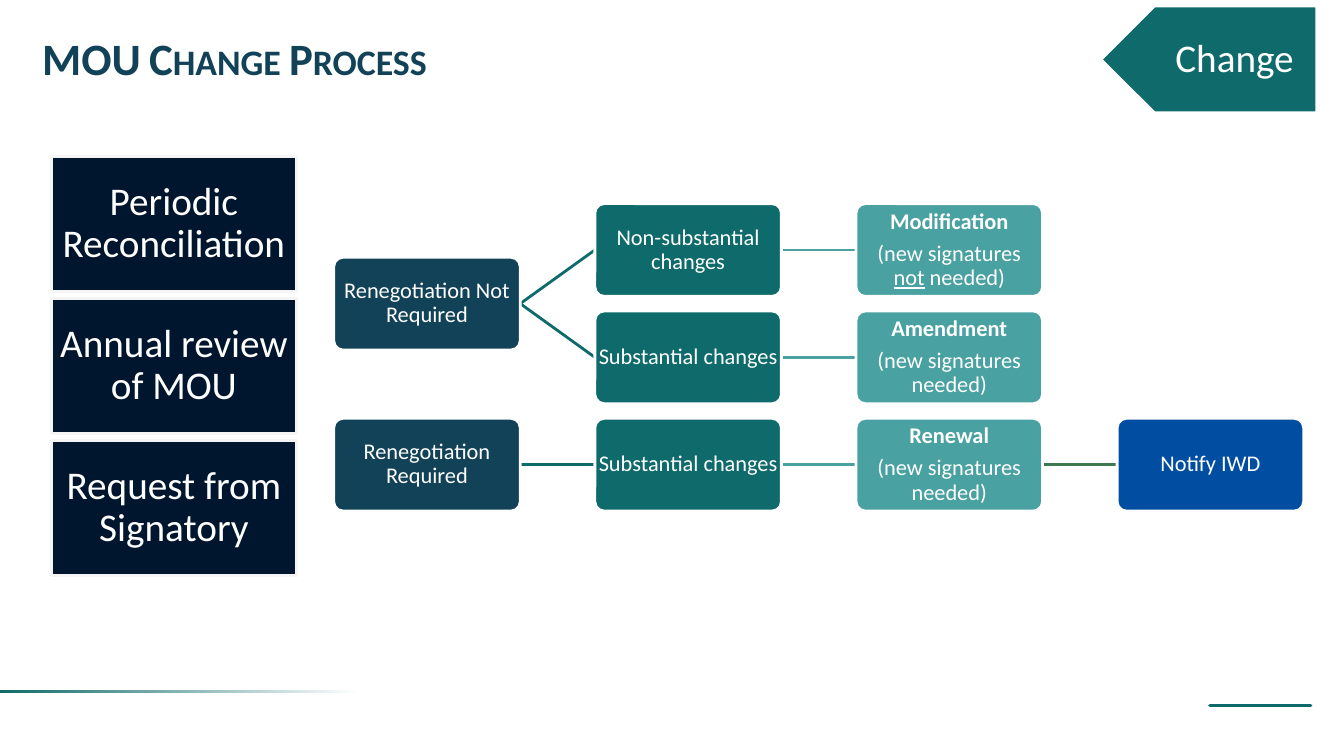
from lxml import etree
from pptx import Presentation
from pptx.dml.color import RGBColor
from pptx.enum.shapes import MSO_CONNECTOR as Connector, MSO_SHAPE as Shape
from pptx.enum.text import MSO_ANCHOR as Anchor, PP_ALIGN as Align
from pptx.oxml.ns import qn
from pptx.util import Inches, Pt

COLORS = {
    "white": "FFFFFF", "offwhite": "F5F5F5", "night": "00162E", "navy": "114257",
    "teal": "0F6A6B", "aqua": "49A1A2", "blue": "004DA2", "green": "3E7951",
}
COLORS = {name: RGBColor.from_string(value) for name, value in COLORS.items()}


def add_box(kind, left, top, width, height, fill, line="white"):
    shape = slide.shapes.add_shape(
        kind, Inches(left), Inches(top), Inches(width), Inches(height))
    shape.shadow.inherit = False
    shape.fill.solid()
    shape.fill.fore_color.rgb = COLORS[fill]
    shape.line.color.rgb = COLORS[line]
    shape.line.width = Pt(2)
    return shape


def write(shape, lines, size, insets, color="white", bold_first=False, align=Align.CENTER):
    """Fill a shape with paragraphs; words between underscores are underlined."""
    frame = shape.text_frame
    frame.word_wrap = True
    frame.vertical_anchor = Anchor.MIDDLE
    (frame.margin_left, frame.margin_top,
     frame.margin_right, frame.margin_bottom) = map(Inches, insets)
    for index, line in enumerate(lines):
        paragraph = frame.paragraphs[0] if index == 0 else frame.add_paragraph()
        paragraph.alignment = align
        paragraph.line_spacing = 0.9
        paragraph.space_after = Pt(round(size * 0.35, 1))
        for position, part in enumerate(line.split("_")):
            run = paragraph.add_run()
            run.text = part
            if position % 2:
                run.font.underline = True
        font = paragraph.font
        font.name, font.size = "Calibri", Pt(size)
        font.bold = bold_first and index == 0
        font.color.rgb = COLORS[color]
    return frame.paragraphs[0]


presentation = Presentation()
presentation.slide_width, presentation.slide_height = Inches(13.33), Inches(7.5)
slide = presentation.slides.add_slide(presentation.slide_layouts[6])

# Footer: state outline with the page number
state_outline = [
    (12.91, 7), (12.77, 7.01), (12.43, 7.02), (12.44, 7.07), (12.43, 7.11),
    (12.46, 7.18), (12.48, 7.22), (12.48, 7.25), (12.5, 7.28), (12.5, 7.36),
    (12.51, 7.37), (12.8, 7.37), (12.88, 7.36), (12.91, 7.39), (12.92, 7.36),
    (12.95, 7.32), (12.94, 7.26), (12.95, 7.25), (13, 7.24), (13.02, 7.18),
    (12.99, 7.15), (12.96, 7.11), (12.93, 7.09), (12.92, 7.05), (12.92, 7.02),
]
builder = slide.shapes.build_freeform(*state_outline[0], scale=Inches(1))
builder.add_line_segments(state_outline[1:], close=True)
state = builder.convert_to_shape()
state.shadow.inherit = False
state.line.color.rgb = COLORS["teal"]
state.line.width = Pt(2.5)

# Footer: fading rule
rule = add_box(Shape.RECTANGLE, 0, 6.85, 3.8, 0.03, "teal")
rule.line.fill.background()

for shape, angle, stops in (
    (state, 315, [("night", 0), ("navy", 1)]),
    (rule, 0, [("teal", 0), ("white", 0.94)]),
):
    shape.fill.gradient()
    shape.fill.gradient_angle = angle
    for stop, (color, position) in zip(shape.fill.gradient_stops, stops):
        stop.color.rgb = COLORS[color]
        stop.position = position

page_number = slide.shapes.add_textbox(
    Inches(12.46), Inches(7.08), Inches(0.51), Inches(0.23))
paragraph = write(page_number, ["29"], 14, (0, 0.05, 0, 0.05), bold_first=True)
paragraph.line_spacing, paragraph.space_after = 1.0, Pt(0)
paragraph.runs[0].font.bold = True
paragraph.runs[0].font._element.set("spc", "50")

# Title in small capitals
title = slide.shapes.add_textbox(Inches(0.32), Inches(0.24), Inches(10.5), Inches(0.75))
paragraph = write(title, ["MOU Change Process"], 32, (0.1, 0.05, 0.1, 0.05),
                  "navy", bold_first=True, align=Align.LEFT)
paragraph.line_spacing, paragraph.space_after = 0.85, Pt(0)
paragraph.runs[0].font._element.set("cap", "small")

# Section tag
tag = add_box(Shape.PENTAGON, 10.92, 0.06, 2.14, 1.06, "teal")
tag.rotation = 180
tag_label = slide.shapes.add_textbox(Inches(11.18), Inches(0.06), Inches(1.88), Inches(1.06))
write(tag_label, ["Change"], 28, (0.47, 0.12, 0.22, 0.12))

# Triggers
triggers = ["Periodic Reconciliation", "Annual review of MOU", "Request from Signatory"]
for row, trigger in enumerate(triggers):
    box = add_box(Shape.RECTANGLE, 0.51, 1.55 + 1.41 * row, 2.43, 1.34, "night", "offwhite")
    write(box, [trigger], 28, (0.08, 0.08, 0.08, 0.08))

# Decision tree: column, row, lines
column_fills = ["navy", "teal", "aqua", "blue"]
needed = "(new signatures needed)"
steps = {
    "no renegotiation": (0, 0.5, ["Renegotiation Not Required"]),
    "non-substantial": (1, 0, ["Non-substantial changes"]),
    "modification": (2, 0, ["Modification", "(new signatures _not_ needed)"]),
    "substantial": (1, 1, ["Substantial changes"]),
    "amendment": (2, 1, ["Amendment", needed]),
    "renegotiation": (0, 2, ["Renegotiation Required"]),
    "renegotiated": (1, 2, ["Substantial changes"]),
    "renewal": (2, 2, ["Renewal", needed]),
    "notify": (3, 2, ["Notify IWD"]),
}
boxes = {}
for name, (column, row, lines) in steps.items():
    box = add_box(Shape.ROUNDED_RECTANGLE, 3.31 + 2.59 * column, 2.02 + 1.065 * row,
                  1.85, 0.92, column_fills[column])
    box.adjustments[0] = 0.1
    write(box, lines, 16, (0.01, 0.01, 0.01, 0.01), bold_first=len(lines) > 1)
    boxes[name] = box

# Connectors, placed behind the boxes
links = [
    ("no renegotiation", "non-substantial", "teal"),
    ("no renegotiation", "substantial", "teal"),
    ("renegotiation", "renegotiated", "teal"),
    ("non-substantial", "modification", "aqua"),
    ("substantial", "amendment", "aqua"),
    ("renegotiated", "renewal", "aqua"),
    ("renewal", "notify", "green"),
]
for source, target, color in links:
    connector = slide.shapes.add_connector(Connector.STRAIGHT, 0, 0, 0, 0)
    connector.begin_connect(boxes[source], 3)
    connector.end_connect(boxes[target], 1)
    connector.line.color.rgb = COLORS[color]
    connector.line.width = Pt(2)
    etree.SubElement(connector.element.spPr, qn("a:effectLst"))
    boxes["no renegotiation"].element.addprevious(connector.element)

presentation.save("out.pptx")
